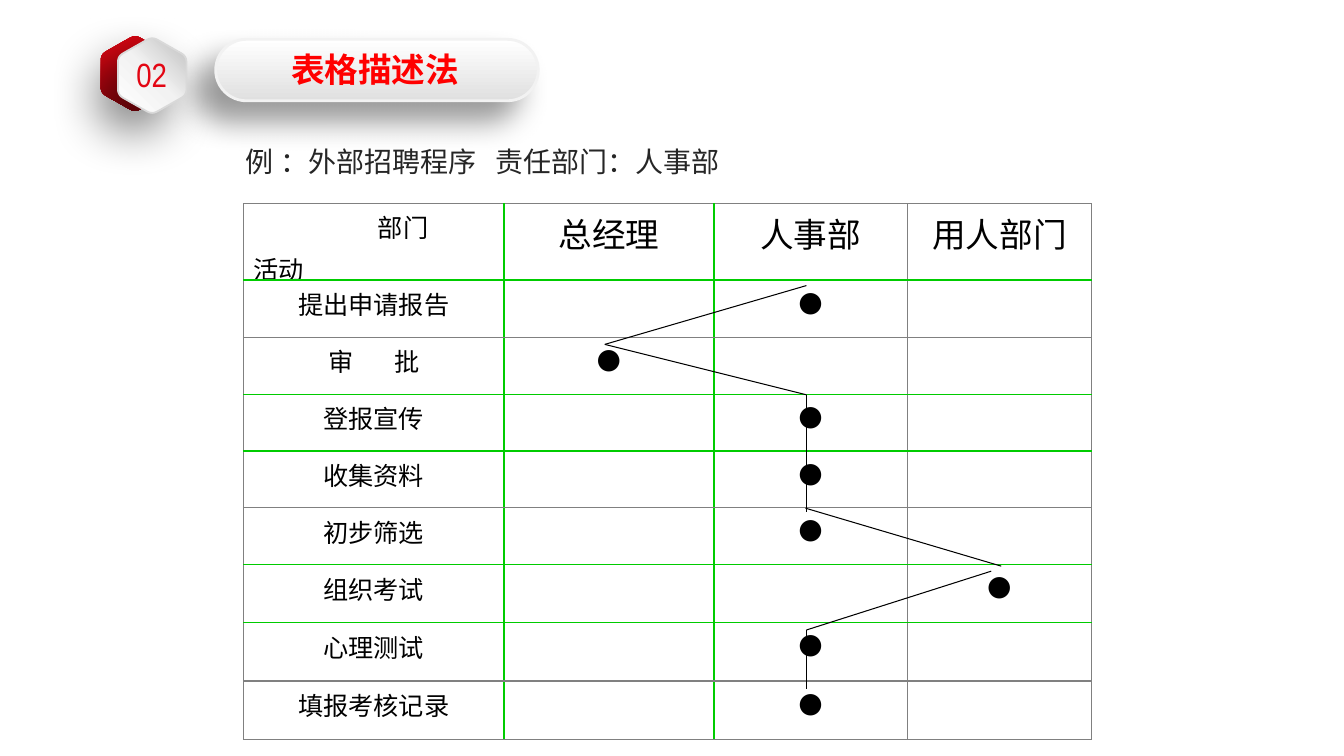
from dataclasses import dataclass
from itertools import pairwise, product

from lxml.etree import SubElement
from pptx import Presentation
from pptx.dml.color import RGBColor
from pptx.enum.shapes import MSO_CONNECTOR, MSO_SHAPE
from pptx.enum.text import MSO_ANCHOR, PP_ALIGN
from pptx.oxml.ns import qn
from pptx.util import Inches, Length, Pt

GRID_COLUMNS = 160
GRID_ROWS = 90
GAP = "\t"


@dataclass(frozen=True)
class Theme:
    red: str = "E30613"
    dark_red: str = "81040B"
    title: str = "FF0000"
    caption: str = "262626"
    ink: str = "000000"
    green: str = "00CC00"
    grey: str = "808080"
    heading_size: int = 24
    caption_size: int = 20
    body_size: int = 18
    narrow: str = "Arial Narrow"
    sans: str = "Noto Sans CJK SC"
    latin: str = "Roboto"


THEME = Theme()


@dataclass(frozen=True)
class Area:
    column: float
    row: float
    columns: float
    rows: float

    def lengths(self) -> tuple[Length, ...]:
        return tuple(map(grid, (self.column, self.row, self.columns, self.rows)))


@dataclass(frozen=True)
class Surface:
    stops: tuple[str, ...]
    angle: int
    line: str | None = None
    line_width: float = 0
    shadow_alpha: int = 0
    shadow_blur: int = 0


@dataclass(frozen=True)
class Step:
    activity: tuple[str, ...]
    department: int


@dataclass(frozen=True)
class Link:
    start: tuple[float, float]
    end: tuple[float, float]


DEPARTMENTS = ("总经理", "人事部", "用人部门")
STEPS = (
    Step(("提出申请报告",), 2),
    Step(("审", " ", "批"), 1),
    Step(("登报宣传",), 2),
    Step(("收集资料",), 2),
    Step(("初步筛选",), 2),
    Step(("组织考试",), 3),
    Step(("心理测试",), 2),
    Step(("填报考核记录",), 2),
)
TABLE_COLUMNS = (31, 25, 23, 22)
TABLE_ROWS = (9.1, 6.83, *(6.77,) * 4, *(6.93,) * 3)
GREY_VERTICALS = (0, 3, 4)
GREY_HORIZONTALS = (0, 2, 5, 8, 9)
LINKS = (
    Link((96, 34), (72, 41)),
    Link((72, 41), (96, 47)),
    Link((96, 47), (96, 55)),
    Link((96, 54), (96, 61)),
    Link((95.9, 60.5), (119.2, 67.4)),
    Link((118, 68), (96, 75)),
    Link((96, 75), (96, 82)),
)
RED_HEXAGON = Surface((THEME.red, THEME.dark_red), 60)
PILL = Surface(("FFFFFF", "E0E0E0"), 90, "F2F2F2", 2, 40, 22)
WHITE_HEXAGON = Surface(("FFFFFF", "F2F2F2", "BFBFBF"), 315, "D9D9D9", 1.25, 50, 35)


def grid(modules: float) -> Length:
    return Inches(modules / 12)


def shade(fill, element, stops: tuple[str, ...], angle: int) -> None:
    fill.gradient()
    gradient = next(element.iter(qn("a:gradFill")))
    stop_list = gradient.find(qn("a:gsLst"))
    for stop in list(stop_list):
        stop_list.remove(stop)
    for index, colour in enumerate(stops):
        position = round(100000 * index / (len(stops) - 1))
        stop = SubElement(stop_list, qn("a:gs"), pos=str(position))
        SubElement(stop, qn("a:srgbClr"), val=colour)
    gradient.find(qn("a:lin")).set("ang", str(angle * 60000))


def dress(shape, surface: Surface) -> None:
    shape.shadow.inherit = False
    shade(shape.fill, shape.element, surface.stops, surface.angle)
    if surface.line is None:
        shape.line.fill.background()
        return
    shape.line.color.rgb = RGBColor.from_string(surface.line)
    shape.line.width = Pt(surface.line_width)
    effects = next(shape.element.iter(qn("a:effectLst")))
    shadow = SubElement(effects, qn("a:outerShdw"), blurRad=str(Pt(surface.shadow_blur)),
                        dist=str(Pt(20)), dir=str(135 * 60000), algn="tr", rotWithShape="0")
    colour = SubElement(shadow, qn("a:srgbClr"), val=THEME.ink)
    SubElement(colour, qn("a:alpha"), val=str(surface.shadow_alpha * 1000))


def add_hexagon(page, area: Area, surface: Surface) -> None:
    shares = ((0.5, -0.02), (1, 0.24), (1, 0.76), (0.5, 1.02), (0, 0.76), (0, 0.24))
    corners = [(area.column + x * area.columns, area.row + y * area.rows) for x, y in shares]
    outline = []
    for index, corner in enumerate(corners):
        before, after = corners[index - 1], corners[(index + 1) % len(corners)]
        first, last = ([c + 0.15 * (n - c) for c, n in zip(corner, near)]
                       for near in (before, after))
        for part in range(7):
            t = part / 6
            outline.append(tuple(grid((1 - t) ** 2 * a + 2 * t * (1 - t) * c + t * t * b)
                                 for a, c, b in zip(first, corner, last)))
    builder = page.shapes.build_freeform(*outline[0])
    builder.add_line_segments(outline[1:], close=True)
    dress(builder.convert_to_shape(), surface)


def add_span(para, text: str, size: int, colour: str, face: str, bold: bool = False,
             tracking: float = 0):
    span = para.add_run()
    span.text = text
    span.font.size = Pt(size)
    span.font.bold = bold
    span.font.name = face
    span.font.color.rgb = RGBColor.from_string(colour)
    properties = span.font._element
    if tracking:
        properties.set("spc", str(round(tracking * 100)))
    SubElement(properties, qn("a:ea"), typeface=THEME.sans)
    return span


def add_box(page, area: Area, wrap: bool = True, anchor: MSO_ANCHOR = MSO_ANCHOR.TOP):
    frame = page.shapes.add_textbox(*area.lengths()).text_frame
    frame.word_wrap = wrap
    frame.vertical_anchor = anchor
    return frame.paragraphs[0]


def add_cell_text(cell, parts: tuple[str, ...], size: int) -> None:
    para = cell.text_frame.paragraphs[0]
    para.alignment = PP_ALIGN.CENTER
    for part in parts:
        add_span(para, part, size, THEME.ink, THEME.latin, tracking=25 if part == " " else 0)


def rule_cell(cell, row: int, column: int) -> None:
    edges = (("a:lnL", column, GREY_VERTICALS), ("a:lnR", column + 1, GREY_VERTICALS),
             ("a:lnT", row, GREY_HORIZONTALS), ("a:lnB", row + 1, GREY_HORIZONTALS))
    properties = cell._tc.get_or_add_tcPr()
    for tag, index, greys in edges:
        edge = SubElement(properties, qn(tag), w=str(Pt(1)))
        fill = SubElement(edge, qn("a:solidFill"))
        SubElement(fill, qn("a:srgbClr"), val=THEME.grey if index in greys else THEME.green)
    cell.fill.background()


def add_process_table(page) -> None:
    area = Area(29, 24.24, sum(TABLE_COLUMNS), sum(TABLE_ROWS))
    table = page.shapes.add_table(len(TABLE_ROWS), len(TABLE_COLUMNS), *area.lengths()).table
    table.first_row = table.horz_banding = False
    for column, width in zip(table.columns, TABLE_COLUMNS):
        column.width = grid(width)
    for row, height in zip(table.rows, TABLE_ROWS):
        row.height = grid(height)
    for row, column in product(range(len(TABLE_ROWS)), range(len(TABLE_COLUMNS))):
        rule_cell(table.cell(row, column), row, column)
    corner = table.cell(0, 0).text_frame
    department, activity = corner.paragraphs[0], corner.add_paragraph()
    department._p.get_or_add_pPr().set("marL", str(grid(14.8)))
    activity.space_before = Pt(3.6)
    for para, text in ((department, "部门"), (activity, "活动")):
        add_span(para, text, THEME.body_size, THEME.ink, THEME.latin)
    for column, name in enumerate(DEPARTMENTS, 1):
        add_cell_text(table.cell(0, column), (name,), THEME.heading_size)
    for row, step in enumerate(STEPS, 1):
        add_cell_text(table.cell(row, 0), step.activity, THEME.body_size)
        add_cell_text(table.cell(row, step.department), ("●",), THEME.caption_size)


def add_link(page, link: Link) -> None:
    line = page.shapes.add_connector(MSO_CONNECTOR.STRAIGHT, *map(grid, link.start + link.end))
    line.line.color.rgb = RGBColor.from_string(THEME.ink)
    line.line.width = Pt(0.75)
    SubElement(line.element.spPr, qn("a:effectLst"))


def add_header(page) -> None:
    add_hexagon(page, Area(12, 4.32, 8.16, 8.88), RED_HEXAGON)
    pill = page.shapes.add_shape(MSO_SHAPE.ROUNDED_RECTANGLE,
                                 *Area(25.68, 4.68, 38.4, 7.32).lengths())
    pill.adjustments[0] = 0.5
    dress(pill, PILL)
    add_hexagon(page, Area(14.04, 4.56, 8.16, 8.88), WHITE_HEXAGON)
    number = add_box(page, Area(13.44, 5.88, 9.24, 6))
    number.alignment = PP_ALIGN.CENTER
    span = add_span(number, "02", THEME.heading_size, THEME.red, THEME.narrow)
    shade(span.font.fill, span.font._element, RED_HEXAGON.stops, RED_HEXAGON.angle)
    title = add_box(page, Area(33.48, 5.28, 22.68, 6.12), wrap=False)
    add_span(title, "表格描述法", THEME.heading_size, THEME.title, THEME.sans, bold=True)
    caption = add_box(page, Area(28.08, 16.56, 86.04, 5.28), anchor=MSO_ANCHOR.MIDDLE)
    for text, tracking in (("例 ：外部招聘程序", 0), (" ", 9), ("责任部门：人事部", 0)):
        add_span(caption, text, THEME.caption_size, THEME.caption, THEME.sans, tracking=tracking)


def main() -> None:
    deck = Presentation()
    deck.slide_width, deck.slide_height = grid(GRID_COLUMNS), grid(GRID_ROWS)
    page = deck.slides.add_slide(deck.slide_layouts[6])
    add_header(page)
    add_process_table(page)
    for link in LINKS:
        add_link(page, link)
    deck.save("out.pptx")


if __name__ == "__main__":
    main()
